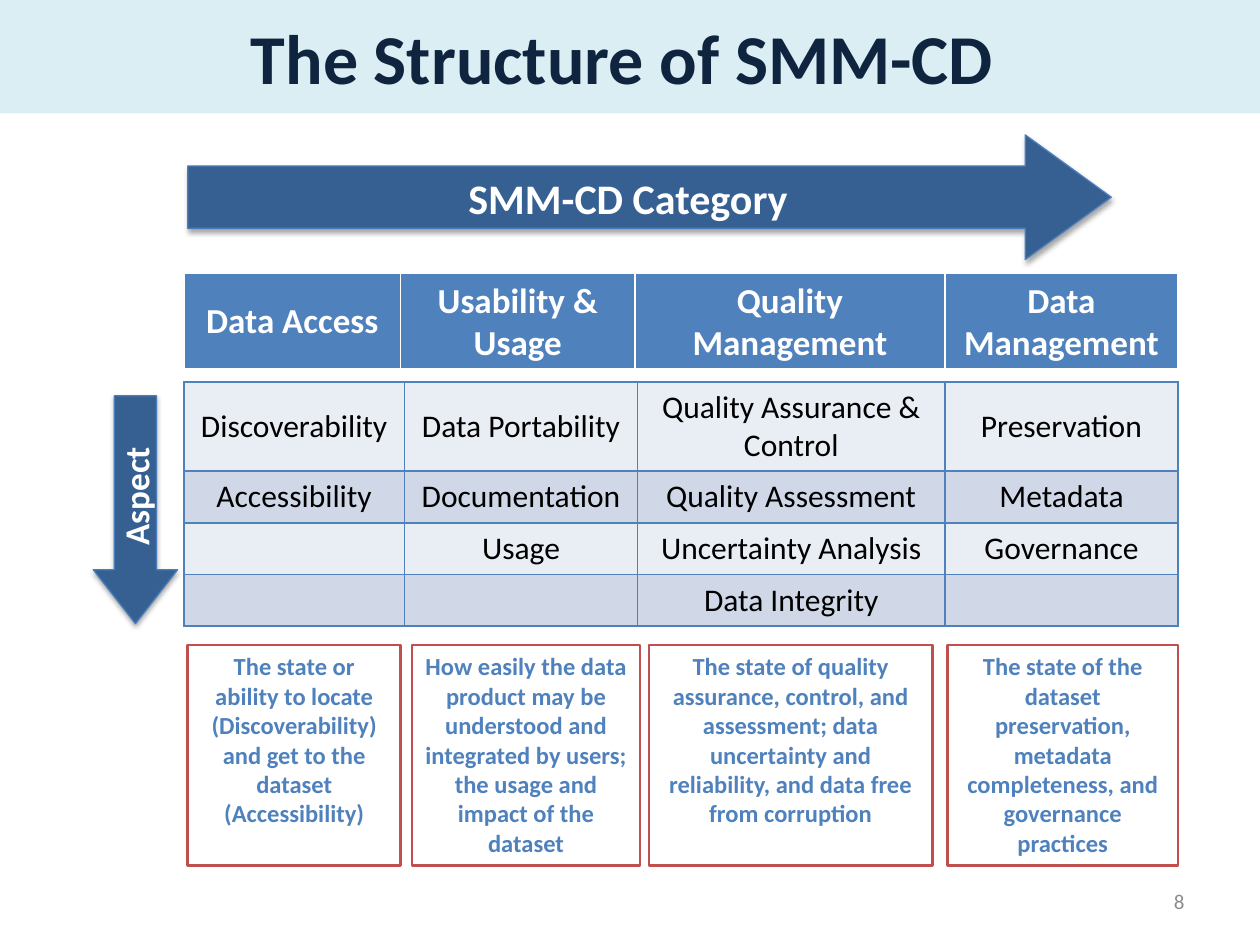
import pptx
import pptx.util
import pptx.dml.color
import pptx.enum.shapes
import pptx.enum.text
import pptx.oxml
import pptx.oxml.ns

Inches, Pt = pptx.util.Inches, pptx.util.Pt
SHAPE = pptx.enum.shapes.MSO_SHAPE
ANCHOR = pptx.enum.text.MSO_ANCHOR
ALIGN = pptx.enum.text.PP_ALIGN

COLORS = {
    "title_bg": "DBEEF4", "title": "0F243E", "arrow": "376092", "arrow_line": "4B7EBC",
    "blue": "4F81BD", "red": "C0504D", "white": "FFFFFF", "black": "000000",
    "band_light": "E9EDF4", "band_dark": "D0D8E8", "number": "8C8C8C",
}

CATEGORIES = ["Data Access", "Usability & Usage", "Quality Management", "Data Management"]
ASPECTS = [
    ["Discoverability", "Data Portability", "Quality Assurance & Control", "Preservation"],
    ["Accessibility", "Documentation", "Quality Assessment", "Metadata"],
    ["", "Usage", "Uncertainty Analysis", "Governance"],
    ["", "", "Data Integrity", ""],
]
# left, width, text
DEFINITIONS = [
    (1.49, 1.69, "The state or ability to locate (Discoverability) and get to the dataset "
                 "(Accessibility)"),
    (3.27, 1.81, "How easily the data product may be understood and integrated by users; "
                 "the usage and impact of the dataset"),
    (5.15, 2.25, "The state of quality assurance, control, and assessment; data uncertainty "
                 "and reliability, and data free from corruption"),
    (7.52, 1.83, "The state of the dataset preservation, metadata completeness, and "
                 "governance practices"),
]


def rgb(name):
    return pptx.dml.color.RGBColor.from_string(COLORS[name])


def add_text(tf, text, size, color, bold=False, align=ALIGN.CENTER):
    p = tf.paragraphs[0]
    p.alignment = align
    r = p.add_run()
    r.text = text
    r.font.name = "Calibri"
    r.font.size = Pt(size)
    r.font.bold = bold
    r.font.color.rgb = rgb(color)


def add_box(slide, kind, box, fill=None, line=None, width=0.75, anchor=ANCHOR.MIDDLE):
    sp = slide.shapes.add_shape(kind, *map(Inches, box))
    sp.shadow.inherit = False
    if fill:
        sp.fill.solid()
        sp.fill.fore_color.rgb = rgb(fill)
    else:
        sp.fill.background()
    if line:
        sp.line.color.rgb = rgb(line)
        sp.line.width = Pt(width)
    else:
        sp.line.fill.background()
    sp.text_frame.word_wrap = True
    sp.text_frame.vertical_anchor = anchor
    return sp


def add_title(slide, box):
    sp = add_box(slide, SHAPE.RECTANGLE, box, fill="title_bg")
    add_text(sp.text_frame, "The Structure of SMM-CD ", 40, "title", bold=True)


def add_arrow(slide, kind, box, head, text, size, rotation=0):
    """Block arrow with a label and a soft shadow below it."""
    sp = add_box(slide, kind, box, fill="arrow", line="arrow_line")
    sp.adjustments[0], sp.adjustments[1] = 0.5, head
    sp.rotation = rotation
    effects = sp._element.spPr.find(pptx.oxml.ns.qn("a:effectLst"))
    effects.append(pptx.oxml.parse_xml(
        f'<a:outerShdw {pptx.oxml.ns.nsdecls("a")} blurRad="{Pt(3.1)}" dist="{Pt(1.8)}" '
        'dir="5400000" rotWithShape="0"><a:srgbClr val="000000">'
        '<a:alpha val="35000"/></a:srgbClr></a:outerShdw>'))
    add_text(sp.text_frame, text, size, "white", bold=True)


def set_borders(cell, color, widths):
    """Draw the left, right, top and bottom borders; call before the cell's fill is set."""
    tc_pr = cell._tc.get_or_add_tcPr()
    for side, width in zip("LRTB", widths):
        tc_pr.append(pptx.oxml.parse_xml(
            f'<a:ln{side} {pptx.oxml.ns.nsdecls("a")} w="{Pt(width)}"><a:solidFill>'
            f'<a:srgbClr val="{COLORS[color]}"/></a:solidFill></a:ln{side}>'))


def add_grid(slide, left, top, cols, heights, rows, fills, border, widths, size, color,
             bold=False):
    """Table whose rows take the fills in turn."""
    frame = slide.shapes.add_table(len(rows), len(cols), Inches(left), Inches(top),
                                   Inches(sum(cols)), Inches(sum(heights)))
    table = frame.table
    for column, width in zip(table.columns, cols):
        column.width = Inches(width)
    for i, (height, texts) in enumerate(zip(heights, rows)):
        table.rows[i].height = Inches(height)
        for j, text in enumerate(texts):
            cell = table.cell(i, j)
            set_borders(cell, border, widths)
            cell.fill.solid()
            cell.fill.fore_color.rgb = rgb(fills[i % len(fills)])
            cell.vertical_anchor = ANCHOR.MIDDLE
            if text:
                add_text(cell.text_frame, text, size, color, bold)


def add_definitions(slide, top, height):
    for left, width, text in DEFINITIONS:
        sp = add_box(slide, SHAPE.RECTANGLE, (left, top, width, height),
                     line="red", width=1.5, anchor=ANCHOR.TOP)
        add_text(sp.text_frame, text, 14, "blue", bold=True)


def add_slide_number(slide, box):
    tf = slide.shapes.add_textbox(*map(Inches, box)).text_frame
    tf.word_wrap = True
    tf.vertical_anchor = ANCHOR.MIDDLE
    add_text(tf, "8", 12, "number", align=ALIGN.RIGHT)


def main():
    prs = pptx.Presentation()
    prs.slide_width, prs.slide_height = Inches(10), Inches(7.5)
    s = prs.slides.add_slide(prs.slide_layouts[6])
    add_slide_number(s, (7.17, 6.95, 2.33, 0.4))
    add_arrow(s, SHAPE.RIGHT_ARROW, (1.49, 1.07, 7.33, 0.99), 0.69, "SMM-CD Category", 24)
    add_arrow(s, SHAPE.LEFT_ARROW, (0.17, 3.71, 1.81, 0.67), 0.64, "Aspect", 20, rotation=270)
    add_grid(s, 1.46, 3.03, [1.75, 1.85, 2.44, 1.85], [0.71, 0.41, 0.41, 0.41], ASPECTS,
             ["band_light", "band_dark"], "blue", (1, 1, 1, 1), 18, "black")
    add_title(s, (0, 0, 10, 0.9))
    add_grid(s, 1.46, 2.17, [1.72, 1.86, 2.46, 1.85], [0.77], [CATEGORIES],
             ["blue"], "white", (1, 1, 1, 3), 20, "white", bold=True)
    add_definitions(s, 5.12, 1.75)
    prs.save("out.pptx")


if __name__ == "__main__":
    main()
